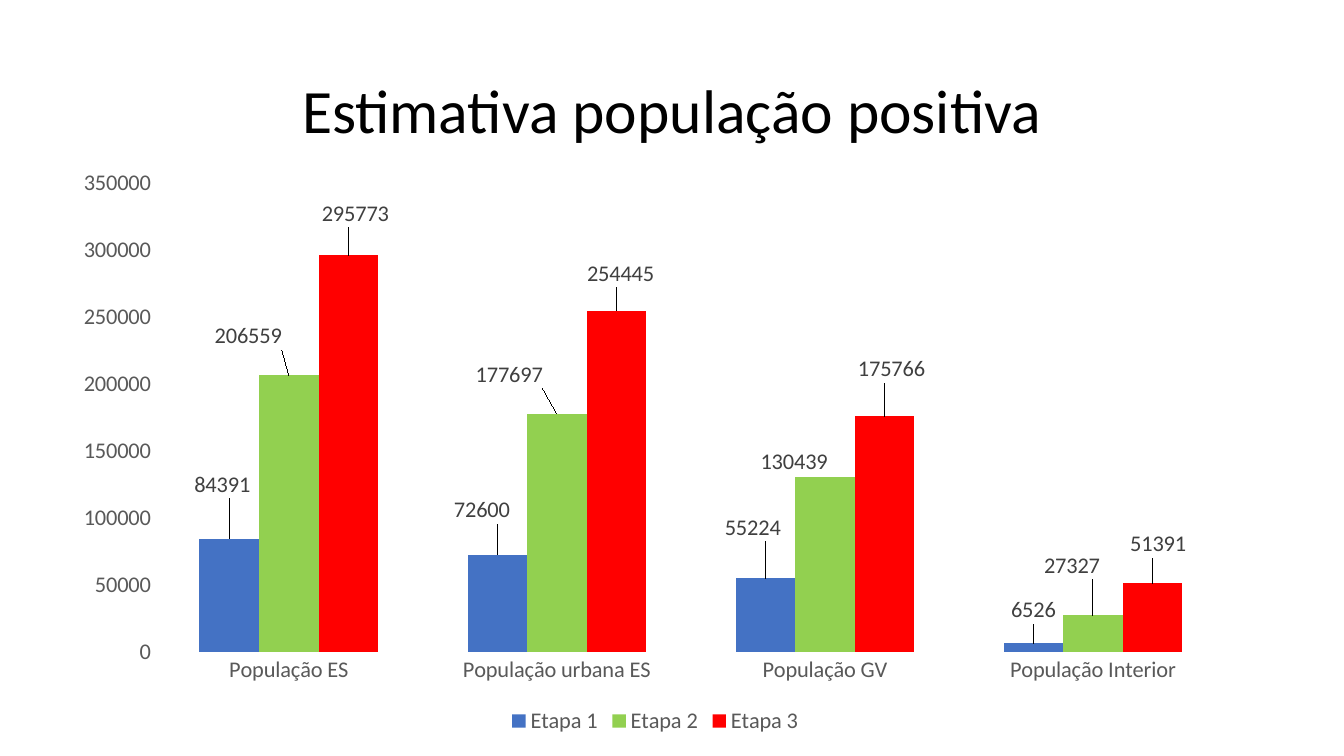
from dataclasses import dataclass

from lxml import etree
from pptx import Presentation
from pptx import util as u
from pptx.chart import data as chart_data
from pptx.dml import color
from pptx.enum import chart as chart_enum
from pptx.enum import text
from pptx.oxml import ns


@dataclass(frozen=True)
class Theme:
    font: str = "Calibri"
    title_color: str = "000000"
    axis_color: str = "595959"
    label_color: str = "404040"
    title_size: float = 44
    chart_size: float = 16


@dataclass(frozen=True)
class Box:
    left: float
    top: float
    width: float
    height: float


@dataclass(frozen=True)
class Stage:
    name: str
    fill: str
    values: tuple[int, ...]
    label_shifts: tuple[tuple[float, float], ...]


THEME = Theme()
TITLE_BOX = Box(66, 29, 828, 104)
CHART_BOX = Box(42.5, 114, 851, 414)
PLOT_FRACTIONS = Box(0.08, 0.04, 0.9, 0.81)
CATEGORIES = ("População ES", "População urbana ES", "População GV", "População Interior")
STAGES = (
    Stage("Etapa 1", "4472C4", (84391, 72600, 55224, 6526),
          ((-5, -26), (-11, -19), (-9, -23), (0, -11))),
    Stage("Etapa 2", "92D050", (206559, 177697, 130439, 27327),
          ((-29, -15), (-34, -15), (-22, 2), (-15, -23))),
    Stage("Etapa 3", "FF0000", (295773, 254445, 175766, 51391),
          ((5, -17), (3, -14), (5, -21), (4, -15))),
)


def format_font(font, size: float, rgb: str) -> None:
    font.name = THEME.font
    font.size = u.Pt(size)
    font.bold = False
    font.color.rgb = color.RGBColor.from_string(rgb)


def write_text(shape, content: str, *, size: float, rgb: str,
               alignment=text.PP_ALIGN.CENTER, anchor=text.MSO_ANCHOR.MIDDLE,
               line_spacing: float = 0.9) -> None:
    frame = shape.text_frame
    frame.word_wrap = True
    frame.vertical_anchor = anchor
    paragraph = frame.paragraphs[0]
    paragraph.alignment = alignment
    paragraph.line_spacing = line_spacing
    run = paragraph.add_run()
    run.text = content
    format_font(run.font, size, rgb)


def place(shape, box: Box) -> None:
    shape.left, shape.top = u.Pt(box.left), u.Pt(box.top)
    shape.width, shape.height = u.Pt(box.width), u.Pt(box.height)


def manual_layout(**settings: str | float):
    layout = etree.Element(ns.qn("c:layout"))
    manual = etree.SubElement(layout, ns.qn("c:manualLayout"))
    for name, value in settings.items():
        etree.SubElement(manual, ns.qn(f"c:{name}")).set("val", str(value))
    return layout


def fix_plot_area(chart, fractions: Box) -> None:
    plot_area = chart.element.find(".//" + ns.qn("c:plotArea"))
    for layout in plot_area.findall(ns.qn("c:layout")):
        plot_area.remove(layout)
    plot_area.insert(0, manual_layout(
        layoutTarget="inner", xMode="edge", yMode="edge",
        x=fractions.left, y=fractions.top, w=fractions.width, h=fractions.height))


def style_axis(axis) -> None:
    axis.has_major_gridlines = False
    axis.major_tick_mark = chart_enum.XL_TICK_MARK.NONE
    axis.minor_tick_mark = chart_enum.XL_TICK_MARK.NONE
    axis.format.line.fill.background()
    format_font(axis.tick_labels.font, THEME.chart_size, THEME.axis_color)


def style_series(series, stage: Stage) -> None:
    series.format.fill.solid()
    series.format.fill.fore_color.rgb = color.RGBColor.from_string(stage.fill)
    series.invert_if_negative = False
    labels = series.data_labels
    labels.show_value = True
    labels.position = chart_enum.XL_LABEL_POSITION.OUTSIDE_END
    format_font(labels.font, THEME.chart_size, THEME.label_color)
    for index, (right, down) in enumerate(stage.label_shifts):
        label = series.points[index].data_label
        label.position = chart_enum.XL_LABEL_POSITION.OUTSIDE_END
        format_font(label.font, THEME.chart_size, THEME.label_color)
    for element, (right, down) in zip(
            series.data_labels._element.findall(ns.qn("c:dLbl")), stage.label_shifts):
        element.insert(1, manual_layout(x=right / CHART_BOX.width, y=down / CHART_BOX.height))


def add_population_chart(slide) -> None:
    content = chart_data.CategoryChartData(number_format="General")
    content.categories = CATEGORIES
    for stage in STAGES:
        content.add_series(stage.name, stage.values)
    box = CHART_BOX
    chart = slide.shapes.add_chart(
        chart_enum.XL_CHART_TYPE.COLUMN_CLUSTERED,
        u.Pt(box.left), u.Pt(box.top), u.Pt(box.width), u.Pt(box.height), content).chart
    chart.has_title = False
    format_font(chart.font, THEME.chart_size, THEME.axis_color)
    fix_plot_area(chart, PLOT_FRACTIONS)
    chart.has_legend = True
    chart.legend.position = chart_enum.XL_LEGEND_POSITION.BOTTOM
    chart.legend.include_in_layout = False
    format_font(chart.legend.font, THEME.chart_size, THEME.axis_color)
    for axis in (chart.category_axis, chart.value_axis):
        style_axis(axis)
    chart.value_axis.minimum_scale = 0
    chart.value_axis.maximum_scale = 350000
    chart.value_axis.major_unit = 50000
    plot = chart.plots[0]
    plot.gap_width = 150
    plot.overlap = 0
    plot.vary_by_categories = False
    for series, stage in zip(plot.series, STAGES):
        style_series(series, stage)


def main() -> None:
    presentation = Presentation()
    presentation.slide_width, presentation.slide_height = u.Pt(960), u.Pt(540)
    slide = presentation.slides.add_slide(presentation.slide_layouts[5])
    title = slide.shapes.title
    place(title, TITLE_BOX)
    write_text(title, "Estimativa população positiva",
               size=THEME.title_size, rgb=THEME.title_color)
    add_population_chart(slide)
    presentation.save("out.pptx")


if __name__ == "__main__":
    main()
